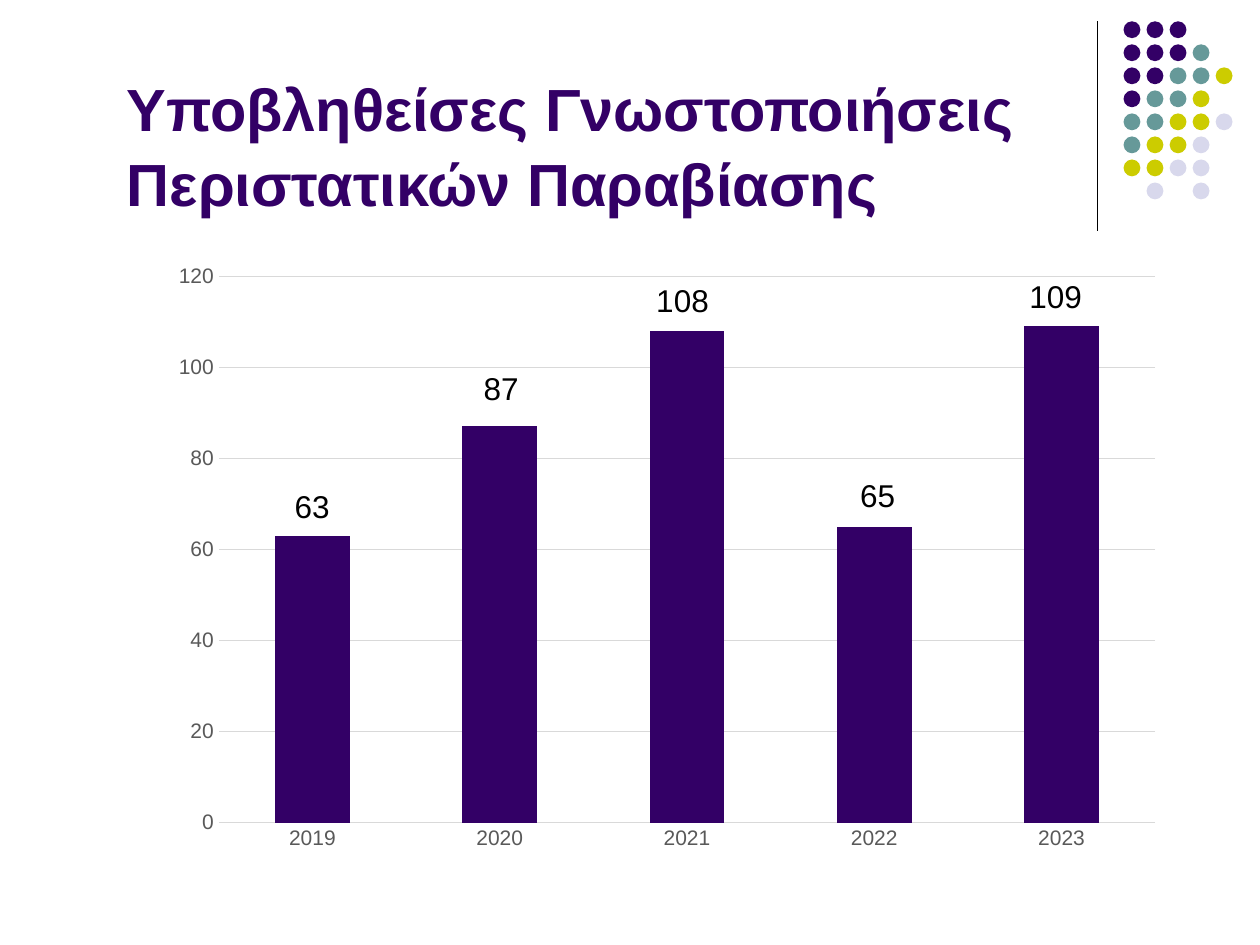
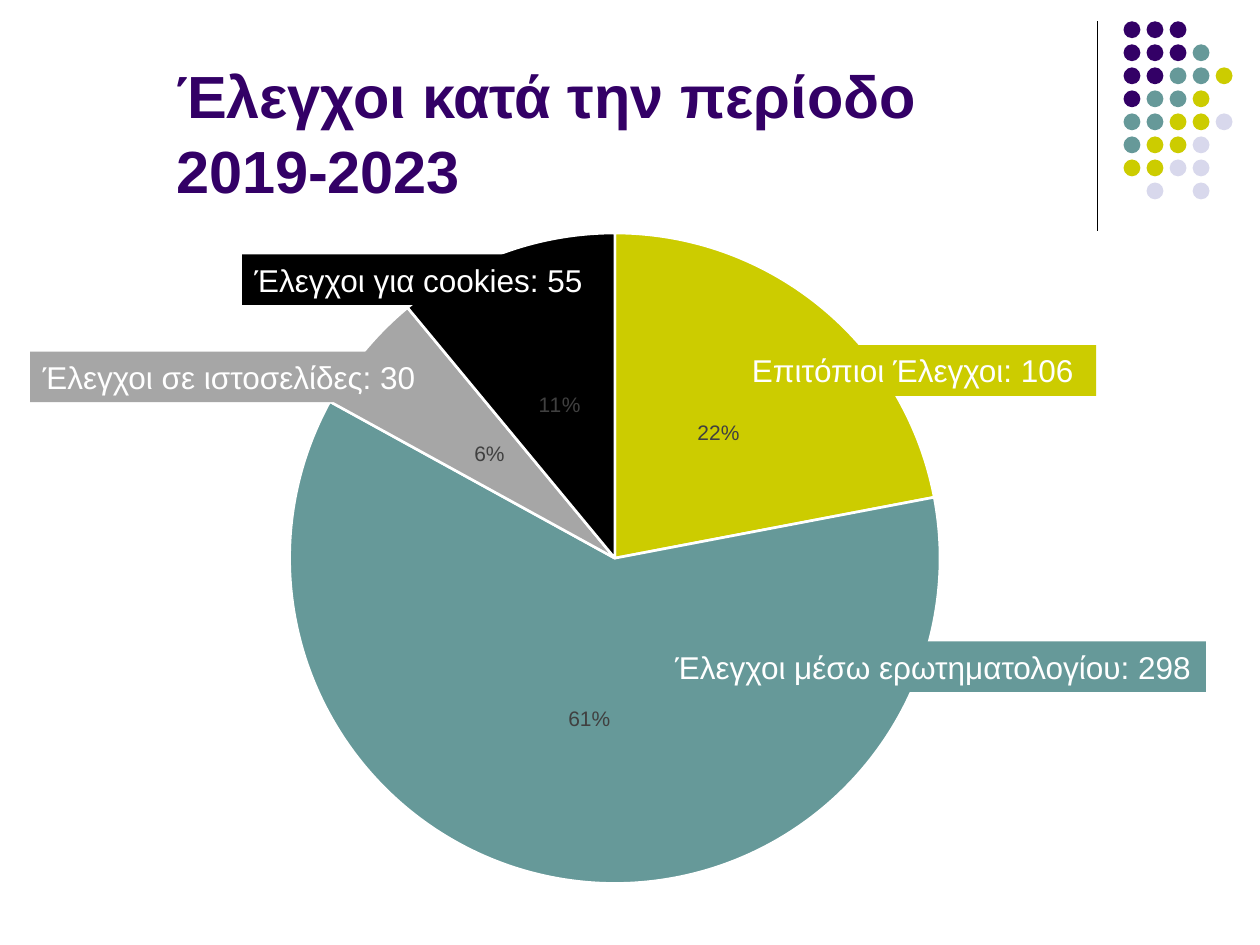
from lxml import etree
from pptx import Presentation
from pptx.chart.data import CategoryChartData
from pptx.dml.color import RGBColor
from pptx.enum.chart import XL_CHART_TYPE, XL_LABEL_POSITION, XL_TICK_MARK
from pptx.enum.shapes import MSO_CONNECTOR, MSO_SHAPE
from pptx.enum.text import MSO_ANCHOR, MSO_AUTO_SIZE, PP_ALIGN
from pptx.oxml.ns import qn
from pptx.util import Cm, Pt

COLUMN = XL_CHART_TYPE.COLUMN_STACKED
PIE = XL_CHART_TYPE.PIE
LABEL_CENTER = XL_LABEL_POSITION.CENTER
NO_TICK = XL_TICK_MARK.NONE
STRAIGHT = MSO_CONNECTOR.STRAIGHT
OVAL = MSO_SHAPE.OVAL
TOP, BOTTOM = MSO_ANCHOR.TOP, MSO_ANCHOR.BOTTOM
GROW, FIXED = MSO_AUTO_SIZE.SHAPE_TO_FIT_TEXT, MSO_AUTO_SIZE.NONE
LEFT, CENTER = PP_ALIGN.LEFT, PP_ALIGN.CENTER

COLORS = {
    "purple": "330066", "teal": "669999", "yellow": "CCCC00", "lilac": "D8D8EC",
    "gray": "A6A6A6", "black": "000000", "white": "FFFFFF",
    "axis": "595959", "grid": "D9D9D9", "percent": "404040",
}
FONT = "Arial"
DOT_ROWS = ["PPP", "PPPT", "PPTTY", "PTTY", "TTYYL", "TYYL", "YYLL", " L L"]
DOT_COLORS = {"P": "purple", "T": "teal", "Y": "yellow", "L": "lilac"}
DOT_STEP = 3.25 / 7


def color(name):
    return RGBColor.from_string(COLORS[name])


def apply(target, values):
    for name, value in values.items():
        setattr(target, name, value)


class DeckBuilder:
    """Holds the deck style and draws elements on the current page."""

    def __init__(self):
        self.deck = Presentation()
        apply(self.deck, {"slide_width": Cm(25.4), "slide_height": Cm(19.05)})
        self.page = None

    def add_page(self):
        self.page = self.deck.slides.add_slide(self.deck.slide_layouts[6])
        self.add_line(22.12, 0.43, 22.12, 4.65)
        self.add_dots(22.65, 0.43, 0.34)

    def style_font(self, font, size, tint, bold=False):
        apply(font, {"name": FONT, "size": Pt(size), "bold": bold})
        font.color.rgb = color(tint)

    def style_line(self, line, tint, width):
        line.color.rgb = color(tint)
        line.width = Pt(width)

    def add_line(self, *ends):
        line = self.page.shapes.add_connector(STRAIGHT, *map(Cm, ends))
        self.style_line(line.line, "black", 0.75)
        etree.SubElement(line._element.spPr, qn("a:effectLst"))

    def add_dots(self, left, top, size):
        group = self.page.shapes.add_group_shape()
        for row, letters in enumerate(DOT_ROWS):
            for column, letter in enumerate(letters):
                if letter == " ":
                    continue
                dot = group.shapes.add_shape(
                    OVAL, Cm(left + column * DOT_STEP), Cm(top + row * DOT_STEP),
                    Cm(size), Cm(size))
                dot.shadow.inherit = False
                dot.fill.solid()
                dot.fill.fore_color.rgb = color(DOT_COLORS[letter])
                dot.line.fill.background()

    def add_text(self, text, place, size, tint, bold=False, fill=None,
                 frame=None, para=None):
        box = self.page.shapes.add_textbox(*map(Cm, place))
        if fill:
            box.fill.solid()
            box.fill.fore_color.rgb = color(fill)
        apply(box.text_frame, {"word_wrap": True, **(frame or {})})
        paragraph = box.text_frame.paragraphs[0]
        paragraph.text = text
        apply(paragraph, para or {})
        for span in paragraph.runs:
            self.style_font(span.font, size, tint, bold)

    def add_title(self, text, left, top):
        self.add_text(text, (left, top, 21.39, 3.61), 34, "purple", bold=True,
                      frame={"vertical_anchor": BOTTOM, "auto_size": FIXED},
                      para={"line_spacing": 1.05})

    def add_label(self, text, left, top, width, tint="black", fill=None, align=LEFT):
        self.add_text(text, (left, top, width, 1.02), 18, tint, fill=fill,
                      frame={"vertical_anchor": TOP, "auto_size": GROW},
                      para={"alignment": align, "space_before": Pt(3.6)})

    def add_chart(self, kind, categories, values, place, plot_area):
        data = CategoryChartData()
        data.categories = categories
        data.add_series("Series 1", values)
        chart = self.page.shapes.add_chart(kind, *map(Cm, place), data).chart
        apply(chart, {"has_title": False, "has_legend": False})
        self.style_font(chart.font, 10, "black")
        self.set_plot_area(chart, plot_area)
        return chart

    def set_plot_area(self, chart, plot_area):
        area = chart._chartSpace.chart.plotArea
        for old in area.findall(qn("c:layout")):
            area.remove(old)
        layout = etree.Element(qn("c:layout"))
        area.insert(0, layout)
        manual = etree.SubElement(layout, qn("c:manualLayout"))
        settings = {"layoutTarget": "inner", "xMode": "edge", "yMode": "edge",
                    **dict(zip("xywh", plot_area))}
        for name, value in settings.items():
            etree.SubElement(manual, qn("c:" + name)).set("val", str(value))

    def add_column_chart(self, categories, values, place, plot_area):
        chart = self.add_chart(COLUMN, categories, values, place, plot_area)
        plot = chart.plots[0]
        apply(plot, {"gap_width": 150, "overlap": 100, "vary_by_categories": False})
        bars = plot.series[0].format.fill
        bars.solid()
        bars.fore_color.rgb = color("purple")
        for axis in (chart.category_axis, chart.value_axis):
            apply(axis, {"major_tick_mark": NO_TICK, "minor_tick_mark": NO_TICK})
            self.style_font(axis.tick_labels.font, 12, "axis")
        self.style_line(chart.category_axis.format.line, "grid", 0.75)
        apply(chart.value_axis, {"minimum_scale": 0, "maximum_scale": 120,
                                 "major_unit": 20, "has_major_gridlines": True})
        chart.value_axis.format.line.fill.background()
        self.style_line(chart.value_axis.major_gridlines.format.line, "grid", 0.75)

    def add_pie_chart(self, categories, values, tints, place, plot_area):
        chart = self.add_chart(PIE, categories, values, place, plot_area)
        plot = chart.plots[0]
        plot.vary_by_categories = True
        series = plot.series[0]
        for index, tint in enumerate(tints):
            part = series.points[index].format
            part.fill.solid()
            part.fill.fore_color.rgb = color(tint)
            self.style_line(part.line, "white", 1.5)
        labels = series.data_labels
        apply(labels, {"show_percentage": True, "show_value": False,
                       "number_format": "0%", "number_format_is_linked": False,
                       "position": LABEL_CENTER})
        self.style_font(labels.font, 12, "percent")


def build_incidents(builder):
    builder.add_page()
    counts = {"2019": 63, "2020": 87, "2021": 108, "2022": 65, "2023": 109}
    builder.add_column_chart(list(counts), list(counts.values()),
                             (3.18, 5.08, 20.52, 12.24), (0.06, 0.04, 0.92, 0.9))
    builder.add_title("Υποβληθείσες Γνωστοποιήσεις Περιστατικών Παραβίασης", 2.31, 0.91)
    label_places = [(5.69, 9.7), (9.5, 7.32), (12.98, 5.54), (17.09, 9.47), (20.5, 5.46)]
    for count, (left, top) in zip(counts.values(), label_places):
        builder.add_label(str(count), left, top, 2.01)


def build_audits(builder):
    builder.add_page()
    builder.add_title("Έλεγχοι κατά την περίοδο\v2019-2023", 3.3, 0.66)
    audits = [
        ("Επιτόπιοι Έλεγχοι: 106", 22, "yellow", (14.91, 6.96, 7.19), LEFT),
        ("Έλεγχοι μέσω ερωτηματολογίου: 298", 61, "teal", (13.31, 12.93, 11), CENTER),
        ("Έλεγχοι σε ιστοσελίδες: 30", 6, "gray", (0.61, 7.09, 8.08), LEFT),
        ("Έλεγχοι για cookies: 55", 11, "black", (4.88, 5.13, 7.19), LEFT),
    ]
    shares = [audit[1] for audit in audits]
    tints = [audit[2] for audit in audits]
    builder.add_pie_chart(["1", "2", "3", "4"], shares, tints,
                          (1.09, 4.24, 22.61, 13.89), (0.21, 0.03, 0.58, 0.95))
    for text, share, tint, place, align in audits:
        builder.add_label(text, *place, tint="white", fill=tint, align=align)


def main():
    builder = DeckBuilder()
    build_incidents(builder)
    build_audits(builder)
    builder.deck.save("out.pptx")


if __name__ == "__main__":
    main()
